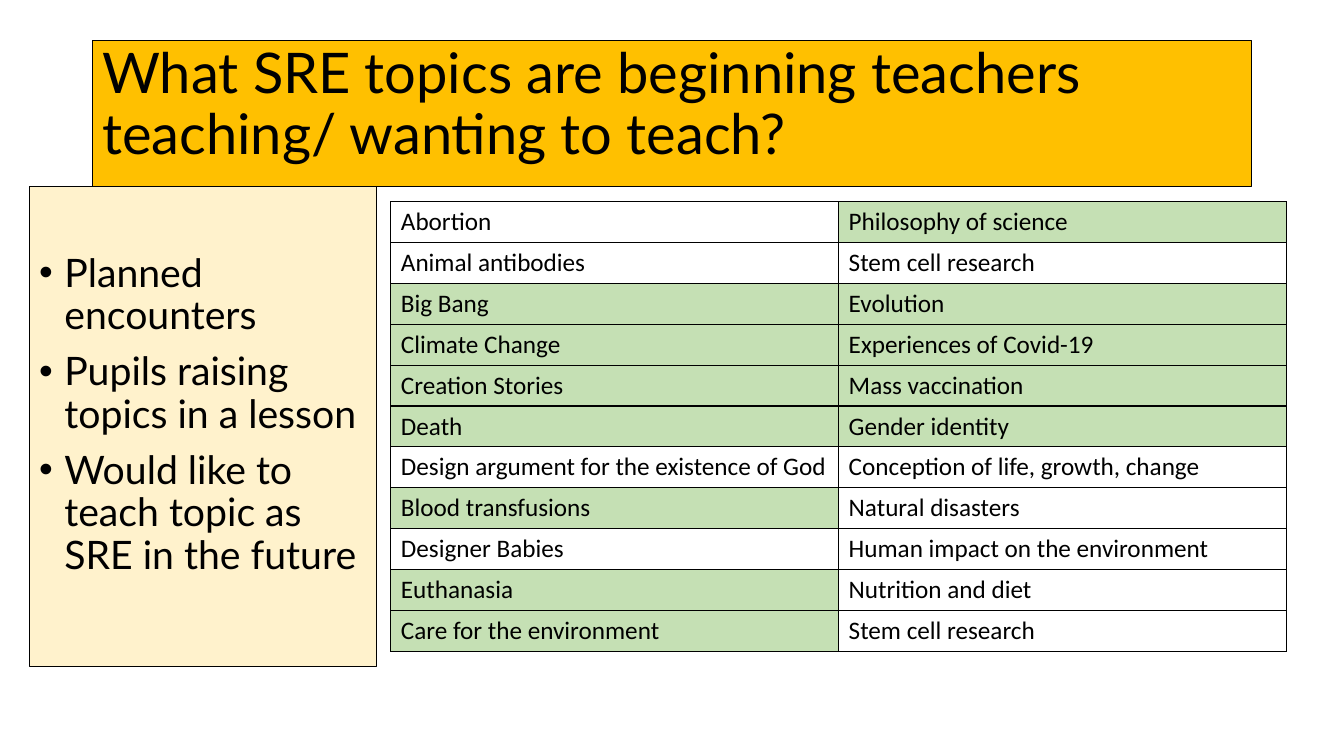
"""Build the slide on SRE topics that beginning teachers teach."""
from dataclasses import dataclass

import lxml.etree
import pptx
import pptx.dml.color
import pptx.enum.shapes
import pptx.enum.text
import pptx.oxml.ns
import pptx.util

Cm = pptx.util.Cm
Pt = pptx.util.Pt
qn = pptx.oxml.ns.qn

HUES = {"gold": "FFC000", "cream": "FFF2CC", "green": "C5E0B4", "white": "FFFFFF", "black": "000000"}


@dataclass
class Panel:
    left: float
    top: float
    width: float
    height: float
    hue: str
    size: float
    lines: list[str]
    inset: float = 0.13
    listed: bool = False


@dataclass
class Topic:
    text: str
    hue: str = "white"


PANELS = [
    Panel(2.33, 1.02, 29.21, 3.68, "gold", 40,
          ["What SRE topics are beginning teachers teaching/ wanting to teach?"]),
    Panel(0.74, 4.7, 8.74, 12.09, "cream", 28,
          ["Planned encounters", "Pupils raising topics in a lesson",
           "Would like to teach topic as SRE in the future"],
          inset=1.68, listed=True),
]

TOPICS = [
    (Topic("Abortion"), Topic("Philosophy of science", "green")),
    (Topic("Animal antibodies"), Topic("Stem cell research")),
    (Topic("Big Bang", "green"), Topic("Evolution", "green")),
    (Topic("Climate Change", "green"), Topic("Experiences of Covid-19", "green")),
    (Topic("Creation Stories", "green"), Topic("Mass vaccination", "green")),
    (Topic("Death", "green"), Topic("Gender identity", "green")),
    (Topic("Design argument for the existence of God"), Topic("Conception of life, growth, change")),
    (Topic("Blood transfusions", "green"), Topic("Natural disasters")),
    (Topic("Designer Babies"), Topic("Human impact on the environment")),
    (Topic("Euthanasia", "green"), Topic("Nutrition and diet")),
    (Topic("Care for the environment", "green"), Topic("Stem cell research")),
]


def shade(name: str) -> pptx.dml.color.RGBColor:
    return pptx.dml.color.RGBColor.from_string(HUES[name])


def paint(fill, hue: str) -> None:
    fill.solid()
    fill.fore_color.rgb = shade(hue)


def write(para, text: str, *, size: float, face: str, spacing: float = 1.0,
          before: float = 0, listed: bool = False) -> None:
    if listed:
        props = para._p.get_or_add_pPr()
        props.set("marL", str(Cm(0.635)))
        props.set("indent", str(-Cm(0.635)))
        lxml.etree.SubElement(props, qn("a:buFont"), typeface="Arial")
        lxml.etree.SubElement(props, qn("a:buChar"), char="•")
    para.alignment = pptx.enum.text.PP_ALIGN.LEFT
    para.line_spacing = spacing
    para.space_before = Pt(before)
    run = para.add_run()
    run.text = text
    run.font.size = Pt(size)
    run.font.name = face
    run.font.color.rgb = shade("black")


def draw_panel(slide, panel: Panel) -> None:
    shape = slide.shapes.add_shape(
        pptx.enum.shapes.MSO_SHAPE.RECTANGLE,
        Cm(panel.left), Cm(panel.top), Cm(panel.width), Cm(panel.height))
    shape.shadow.inherit = False
    paint(shape.fill, panel.hue)
    paint(shape.line.fill, "black")
    shape.line.width = Pt(0.75)
    frame = shape.text_frame
    frame.word_wrap = True
    frame.vertical_anchor = pptx.enum.text.MSO_ANCHOR.TOP
    frame.margin_top = Cm(panel.inset)
    for index, text in enumerate(panel.lines):
        para = frame.add_paragraph() if index else frame.paragraphs[0]
        write(para, text, size=panel.size, face="Lato", spacing=0.9,
              before=10 if index else 0, listed=panel.listed)


def frame_cell(cell) -> None:
    props = cell._tc.get_or_add_tcPr()
    for side in ("lnL", "lnR", "lnT", "lnB"):
        edge = lxml.etree.SubElement(props, qn(f"a:{side}"), w=str(Pt(1)))
        fill = lxml.etree.SubElement(edge, qn("a:solidFill"))
        lxml.etree.SubElement(fill, qn("a:srgbClr"), val=HUES["black"])


def draw_table(slide, topics: list[tuple[Topic, Topic]]) -> None:
    count = len(topics)
    table = slide.shapes.add_table(
        count, 2, Cm(9.85), Cm(5.08), Cm(22.57), Cm(1.03 * count)).table
    table.first_row = False
    table.horz_banding = False
    for row, pair in enumerate(topics):
        table.rows[row].height = Cm(1.03)
        for col, topic in enumerate(pair):
            cell = table.cell(row, col)
            frame_cell(cell)
            paint(cell.fill, topic.hue)
            write(cell.text_frame.paragraphs[0], topic.text, size=18, face="Calibri")


def main() -> None:
    deck = pptx.Presentation()
    deck.slide_width = Cm(33.87)
    deck.slide_height = Cm(19.05)
    slide = deck.slides.add_slide(deck.slide_layouts[6])
    for panel in PANELS:
        draw_panel(slide, panel)
    draw_table(slide, TOPICS)
    deck.save("out.pptx")


if __name__ == "__main__":
    main()
